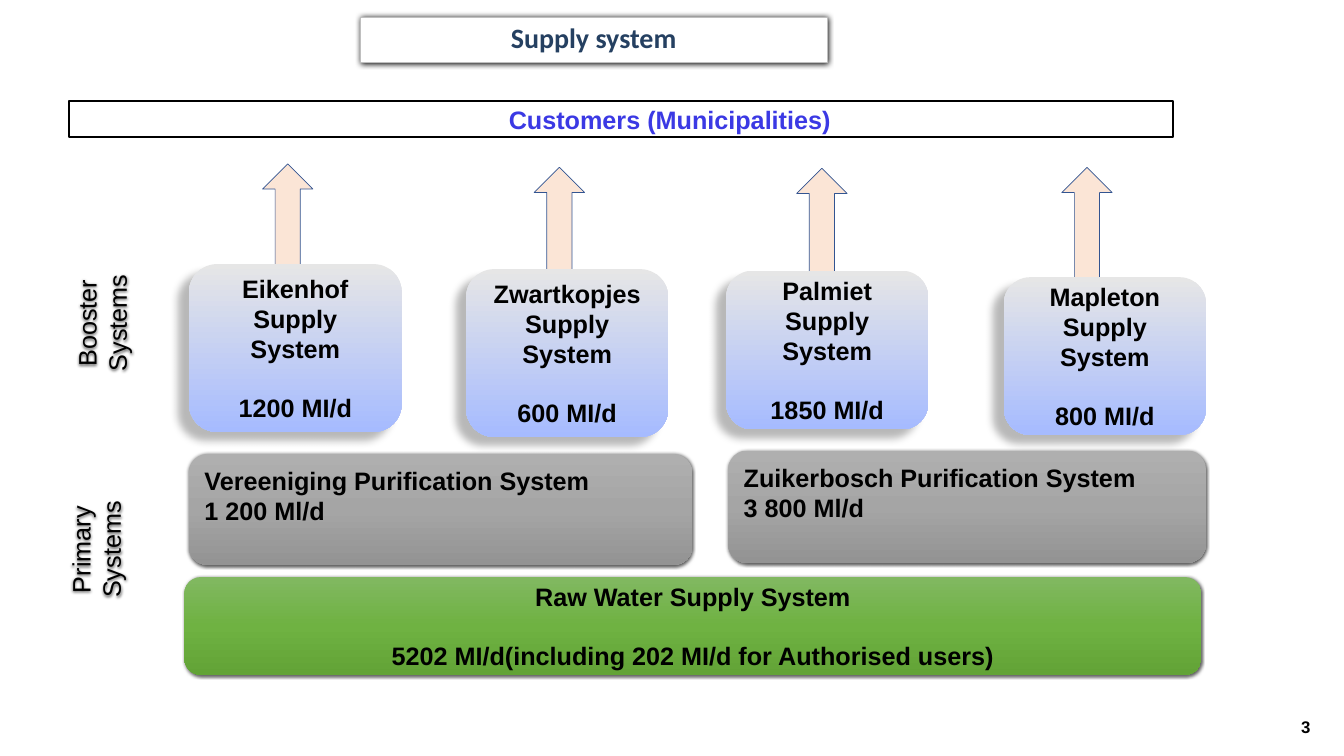
from lxml.etree import SubElement
from pptx import Presentation
from pptx.dml.color import RGBColor
from pptx.enum.shapes import MSO_SHAPE as Shape
from pptx.enum.text import MSO_ANCHOR as Anchor, PP_ALIGN as Align
from pptx.oxml.ns import qn
from pptx.util import Pt

PX = 9144
BLACK = RGBColor(0, 0, 0)
WHITE = RGBColor(255, 255, 255)
NAVY = RGBColor(0x25, 0x40, 0x61)
VIOLET = RGBColor(0x3B, 0x39, 0xE4)
PEACH = RGBColor(0xFB, 0xE5, 0xD6)
ARROW_EDGE = RGBColor(0x32, 0x54, 0x91)
TITLE_EDGE = RGBColor(0xBF, 0xBF, 0xBF)
SILVER = RGBColor(0xE6, 0xE6, 0xE6)
PERIWINKLE = RGBColor(0xA6, 0xBB, 0xFF)
GREYS = [RGBColor(0xAF, 0xAF, 0xAF), RGBColor(0xA5, 0xA5, 0xA5), RGBColor(0x93, 0x93, 0x93)]
GREENS = [RGBColor(0x81, 0xB8, 0x61), RGBColor(0x6F, 0xB2, 0x42), RGBColor(0x62, 0xA3, 0x36)]
SOFT_SHADOW = (63, 4.5, 1.5, 90)
DEEP_SHADOW = (28, 11.8, 19.7, 141)
TITLE_SHADOW = (100, 8.5, 1, 90)
LINE_GAP = 41


def emu(box):
    """Turn a px box into EMU lengths."""
    return [length * PX for length in box]


def write(shape, lines, size=36, font="Arial", color=BLACK, bold=True, align=Align.CENTER,
          anchor=Anchor.MIDDLE, insets=(10, 5, 10, 5), last_gap=0, spacing=None):
    """Write the lines as paragraphs in one format."""
    frame = shape.text_frame
    frame.word_wrap = True
    frame.vertical_anchor = anchor
    (frame.margin_left, frame.margin_top,
     frame.margin_right, frame.margin_bottom) = emu(insets)
    frame.text = "\n".join(lines)
    for paragraph in frame.paragraphs:
        paragraph.alignment = align
        if spacing:
            paragraph.line_spacing = spacing
        paragraph.font.size = Pt(size)
        paragraph.font.name = font
        paragraph.font.bold = bold
        paragraph.font.color.rgb = color
    if last_gap:
        frame.paragraphs[-1].space_before = Pt(last_gap)


def cast_shadow(shape, alpha, blur, distance, direction):
    """Give the shape a black outer shadow."""
    shape.shadow.inherit = False
    effects = shape._element.spPr.find(qn("a:effectLst"))
    outer = SubElement(effects, qn("a:outerShdw"), blurRad=str(Pt(blur)), dist=str(Pt(distance)),
                       dir=str(direction * 60000), algn="ctr", rotWithShape="0")
    tint = SubElement(outer, qn("a:srgbClr"), val=str(BLACK))
    SubElement(tint, qn("a:alpha"), val=str(alpha * 1000))


def shade(shape, colors):
    """Fill the shape from top to bottom with evenly spaced colours."""
    shape.fill.gradient()
    shape.fill.gradient_angle = 270
    stops = shape._element.spPr.find(qn("a:gradFill")).find(qn("a:gsLst"))
    for stop in list(stops):
        stops.remove(stop)
    for index, color in enumerate(colors):
        stop = SubElement(stops, qn("a:gs"), pos=str(100000 * index // (len(colors) - 1)))
        SubElement(stop, qn("a:srgbClr"), val=str(color))


def add_block(slide, kind, box, fill=None, edge=None, weight=1):
    """Add a flat preset shape with an optional fill and outline."""
    block = slide.shapes.add_shape(kind, *emu(box))
    block.shadow.inherit = False
    if fill is None:
        block.fill.background()
    else:
        block.fill.solid()
        block.fill.fore_color.rgb = fill
    if edge is None:
        block.line.fill.background()
    else:
        block.line.color.rgb = edge
        block.line.width = Pt(weight)
    return block


def add_system(slide, box, colors, shadow, lines, **text_format):
    """Add a rounded, shaded and shadowed system panel."""
    panel = add_block(slide, Shape.ROUNDED_RECTANGLE, box)
    shade(panel, colors)
    cast_shadow(panel, *shadow)
    write(panel, lines, **{"insets": (20, 10, 20, 10), **text_format})


def add_booster(slide, box, arrow_offset, arrow_top, name, capacity):
    """Add a booster system with its arrow up to the customers."""
    left, top, _, _ = box
    arrow_box = (left + arrow_offset, arrow_top, 100, top + 10 - arrow_top)
    add_block(slide, Shape.UP_ARROW, arrow_box, PEACH, ARROW_EDGE)
    add_system(slide, box, [SILVER, PERIWINKLE], DEEP_SHADOW,
               [f"{name} Supply System", capacity], last_gap=LINE_GAP)


def add_purification(slide, box, name, capacity):
    """Add a purification system with its text in the upper part."""
    add_system(slide, box, GREYS, SOFT_SHADOW, [f"{name} Purification System", capacity],
               align=Align.LEFT, insets=(20, 10, 20, 67))


def add_raw_water(slide, box):
    """Add the raw water system along the base."""
    add_system(slide, box, GREENS, SOFT_SHADOW,
               ["Raw Water Supply System", "5202 MI/d(including 202 MI/d for Authorised users)"],
               last_gap=LINE_GAP)


def add_level_label(slide, box, lines):
    """Add a label that reads upwards beside its level."""
    label = slide.shapes.add_textbox(*emu(box))
    write(label, lines, bold=False, anchor=Anchor.TOP)
    label.text_frame._txBody.bodyPr.set("vert", "vert270")
    cast_shadow(label, *SOFT_SHADOW)


def add_customers(slide, box):
    """Add the customers bar with its text right of centre."""
    bar = add_block(slide, Shape.RECTANGLE, box, edge=BLACK, weight=3)
    write(bar, ["Customers (Municipalities)"], color=VIOLET, insets=(204, 5, 10, 5))


def add_title(slide, box):
    """Add the framed slide title."""
    title = add_block(slide, Shape.RECTANGLE, box, WHITE, TITLE_EDGE, 0.75)
    cast_shadow(title, *TITLE_SHADOW)
    write(title, ["Supply system"], size=40, font="Calibri", color=NAVY, spacing=0.9)


def add_page_number(slide, box):
    """Add the page number in the corner."""
    write(slide.shapes.add_textbox(*emu(box)), ["3"], size=24, align=Align.LEFT)


def main():
    """Build and save the supply system slide."""
    deck = Presentation()
    deck.slide_width, deck.slide_height = emu((2667, 1500))
    slide = deck.slides.add_slide(deck.slide_layouts[6])
    add_page_number(slide, (2572, 1413, 68, 57))
    boosters = [
        ((375, 524, 422, 333), 146, 325, "Eikenhof", "1200 MI/d"),
        ((925, 534, 401, 333), 135, 332, "Zwartkopjes", "600 MI/d"),
        ((1441, 537, 401, 315), 140, 334, "Palmiet", "1850 MI/d"),
        ((1992, 550, 401, 313), 115, 332, "Mapleton", "800 MI/d"),
    ]
    for booster in boosters:
        add_booster(slide, *booster)
    add_purification(slide, (375, 901, 999, 220), "Vereeniging", "1 200 Ml/d")
    add_purification(slide, (1445, 894, 948, 223), "Zuikerbosch", "3 800 Ml/d")
    add_raw_water(slide, (366, 1145, 2018, 194))
    add_level_label(slide, (137, 474, 141, 334), ["Booster Systems"])
    add_level_label(slide, (125, 859, 141, 463), ["Primary", "Systems"])
    add_customers(slide, (137, 201, 2190, 71))
    add_title(slide, (715, 34, 926, 90))
    deck.save("out.pptx")


if __name__ == "__main__":
    main()
